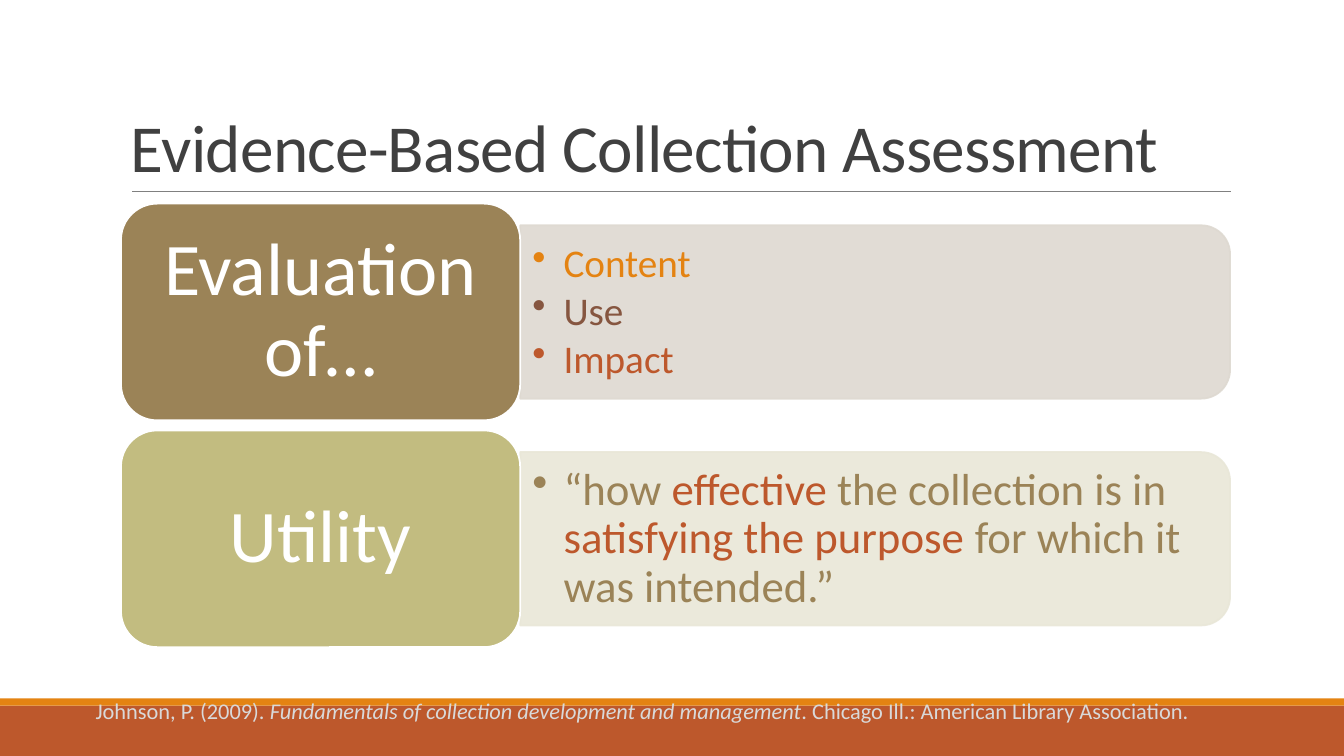
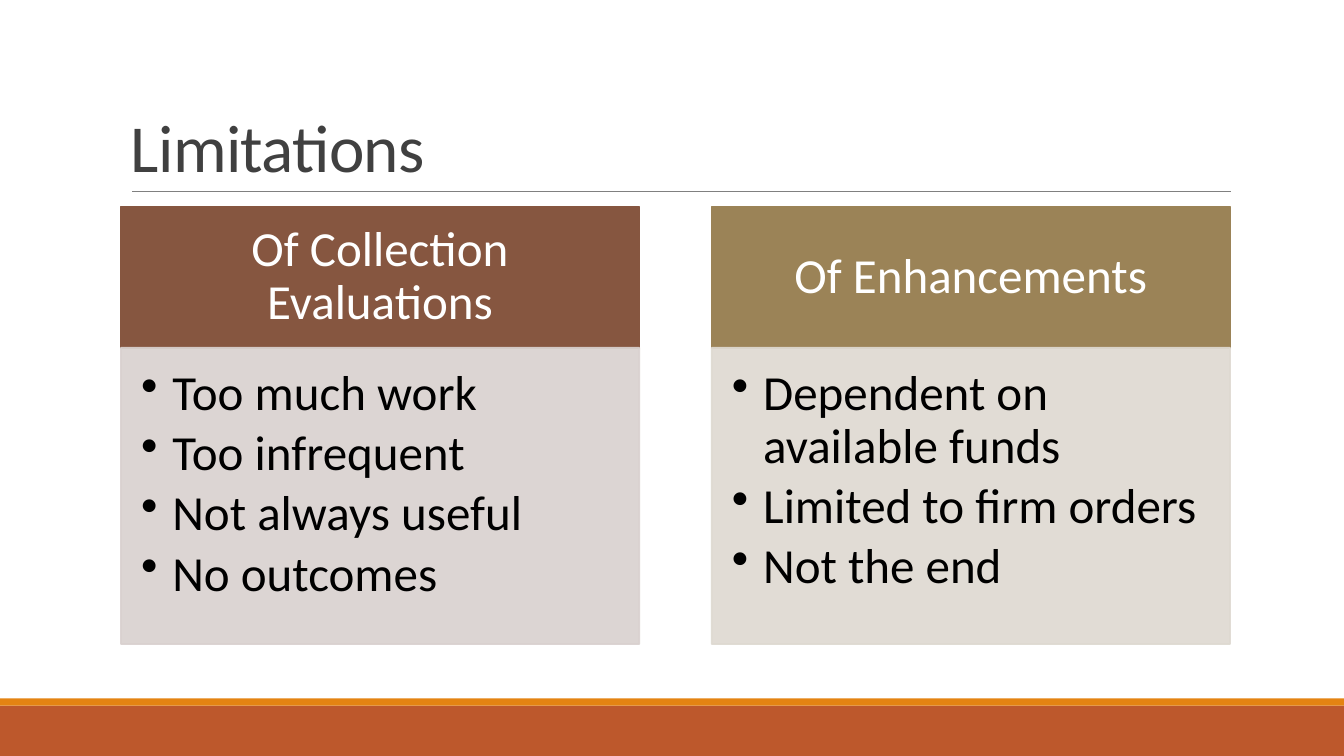
"""Build two slides on collection assessment and its limitations."""
from lxml import etree
from pptx import Presentation, util as u
from pptx.dml.color import RGBColor
from pptx.enum import shapes, text
from pptx.oxml.ns import qn

PX = 9144
WIDTH, HEIGHT = 1333, 750
FONT = "Calibri"
LEFT, RIGHT = 120, 1220

WHITE = RGBColor(0xFF, 0xFF, 0xFF)
BLACK = RGBColor(0x00, 0x00, 0x00)
INK = RGBColor(0x40, 0x40, 0x40)
RULE = RGBColor(0x80, 0x80, 0x80)
SILVER = RGBColor(0xD9, 0xD9, 0xD9)
RUST = RGBColor(0xBD, 0x58, 0x2C)
ORANGE = RGBColor(0xE4, 0x83, 0x12)
BROWN = RGBColor(0x86, 0x56, 0x40)
TAN = RGBColor(0x9B, 0x83, 0x57)
OLIVE = RGBColor(0xC2, 0xBC, 0x80)
PALE_BROWN = RGBColor(0xD9, 0xD1, 0xCF)
PALE_TAN = RGBColor(0xDE, 0xD9, 0xD1)
PALE_OLIVE = RGBColor(0xE9, 0xE7, 0xD8)

RECT = shapes.MSO_SHAPE.RECTANGLE
ROUND = shapes.MSO_SHAPE.ROUNDED_RECTANGLE
TAB = shapes.MSO_SHAPE.ROUND_2_SAME_RECTANGLE
TOP, MIDDLE, BOTTOM = (text.MSO_ANCHOR.TOP, text.MSO_ANCHOR.MIDDLE,
                       text.MSO_ANCHOR.BOTTOM)


def px(*lengths):
    return [u.Emu(round(n * PX)) for n in lengths]


class Deck:
    def __init__(self):
        self.prs = Presentation()
        self.prs.slide_width, self.prs.slide_height = px(WIDTH, HEIGHT)
        self.s = None

    def slide(self, title):
        self.s = self.prs.slides.add_slide(self.prs.slide_layouts[6])
        self.shape(RECT, (0, 700, WIDTH, 50), RUST)
        self.shape(RECT, (0, 693, WIDTH, 7), ORANGE)
        self.rule(131, 190, 1221)
        tf = self.box((LEFT, 31, 1100, 159), BOTTOM)
        self.fill_text(tf, [[(title, INK)]], 48, spacing=0.85, tracking=-50)

    def rule(self, x1, y, x2):
        line = self.s.shapes.add_connector(
            shapes.MSO_CONNECTOR.STRAIGHT, *px(x1, y, x2, y))
        line.line.color.rgb = RULE
        line.line.width = u.Pt(0.5)
        etree.SubElement(line._element.spPr, qn("a:effectLst"))

    def shape(self, kind, at, fill, line=None, alpha=None, rotation=0):
        sp = self.s.shapes.add_shape(kind, *px(*at))
        sp.shadow.inherit = False
        sp.rotation = rotation
        sp.fill.solid()
        sp.fill.fore_color.rgb = fill
        if line is None:
            sp.line.fill.background()
        else:
            sp.line.color.rgb = line
            sp.line.width = u.Pt(1.25)
        if alpha:
            for color in sp._element.spPr.iter(qn("a:srgbClr")):
                etree.SubElement(color, qn("a:alpha"), val=str(alpha * 1000))
        return sp

    def box(self, at, anchor=TOP, insets=(10, 5, 10, 5)):
        sp = self.s.shapes.add_textbox(*px(*at))
        return self.frame(sp, anchor, insets)

    def frame(self, sp, anchor, insets):
        tf = sp.text_frame
        tf.word_wrap = True
        tf.vertical_anchor = anchor
        (tf.margin_left, tf.margin_top,
         tf.margin_right, tf.margin_bottom) = px(*insets)
        return tf

    def fill_text(self, tf, paragraphs, size, align=text.PP_ALIGN.LEFT,
                  spacing=0.9, bullets=False, tracking=None):
        for i, runs in enumerate(paragraphs):
            p = tf.add_paragraph() if i else tf.paragraphs[0]
            p.alignment = align
            p.line_spacing = spacing
            if bullets:
                self.bullet(p, size)
            for words, color, *italic in runs:
                r = p.add_run()
                r.text = words
                r.font.name = FONT
                r.font.size = u.Pt(size)
                r.font.color.rgb = color
                r.font.italic = bool(italic)
                if tracking:
                    r._r.get_or_add_rPr().set("spc", str(tracking))

    def bullet(self, p, size):
        p.space_after = u.Pt(size * 0.15)
        pPr = p._p.get_or_add_pPr()
        indent, = px(31)
        pPr.set("marL", str(indent))
        pPr.set("indent", str(-indent))
        etree.SubElement(pPr, qn("a:buChar"), char="•")

    def label(self, kind, at, words, size, fill, line, insets):
        sp = self.shape(kind, at, fill, line)
        tf = self.frame(sp, MIDDLE, insets)
        self.fill_text(tf, [[(words, WHITE)]], size, text.PP_ALIGN.CENTER)

    def row(self, y, name, fill, pale, size, paragraphs):
        label_w, label_h, panel_h = 396, 215, 172
        x = LEFT + label_w
        w = RIGHT - x
        middle = y + label_h / 2
        self.shape(TAB, (x + (w - panel_h) / 2, middle - w / 2, panel_h, w),
                   pale, pale, 90, 90)
        tf = self.box((x, middle - 77, w - 8, 155), MIDDLE, (12, 6, 12, 6))
        self.fill_text(tf, paragraphs, size, bullets=True)
        self.label(ROUND, (LEFT, y, label_w, label_h), name, 53, fill, WHITE,
                   (32, 21, 32, 21))

    def column(self, x, name, fill, pale, items):
        y, w, head_h, body_h = 205, 514, 140, 294
        self.label(RECT, (x, y, w, head_h), name, 35, fill, fill,
                   (27, 16, 27, 16))
        sp = self.shape(RECT, (x, y + head_h, w, body_h), pale, pale, 90)
        tf = self.frame(sp, TOP, (20, 20, 27, 31))
        self.fill_text(tf, [[(item, BLACK)] for item in items], 35,
                       bullets=True)

    def citation(self, runs):
        tf = self.box((85, 687, 1209, 37))
        self.fill_text(tf, [runs], 16, spacing=1.0)


def main():
    deck = Deck()

    deck.slide("Evidence-Based Collection Assessment")
    deck.row(202, "Evaluation of…", TAN, PALE_TAN, 28,
             [[("Content", ORANGE)], [("Use", BROWN)], [("Impact", RUST)]])
    deck.row(427, "Utility", OLIVE, PALE_OLIVE, 32,
             [[("“how ", TAN), ("effective", RUST),
               (" the collection is in ", TAN),
               ("satisfying the purpose ", RUST),
               ("for which it was intended.”", TAN)]])
    deck.citation([
        ("Johnson, P. (2009). ", SILVER),
        ("Fundamentals of collection development and management", SILVER,
         True),
        (". Chicago Ill.: American Library Association.", SILVER)])

    deck.slide("Limitations")
    deck.column(LEFT, "Of Collection Evaluations", BROWN, PALE_BROWN,
                ["Too much work", "Too infrequent", "Not always useful",
                 "No outcomes"])
    deck.column(RIGHT - 514, "Of Enhancements", TAN, PALE_TAN,
                ["Dependent on available funds", "Limited to firm orders",
                 "Not the end"])

    deck.prs.save("out.pptx")


if __name__ == "__main__":
    main()
